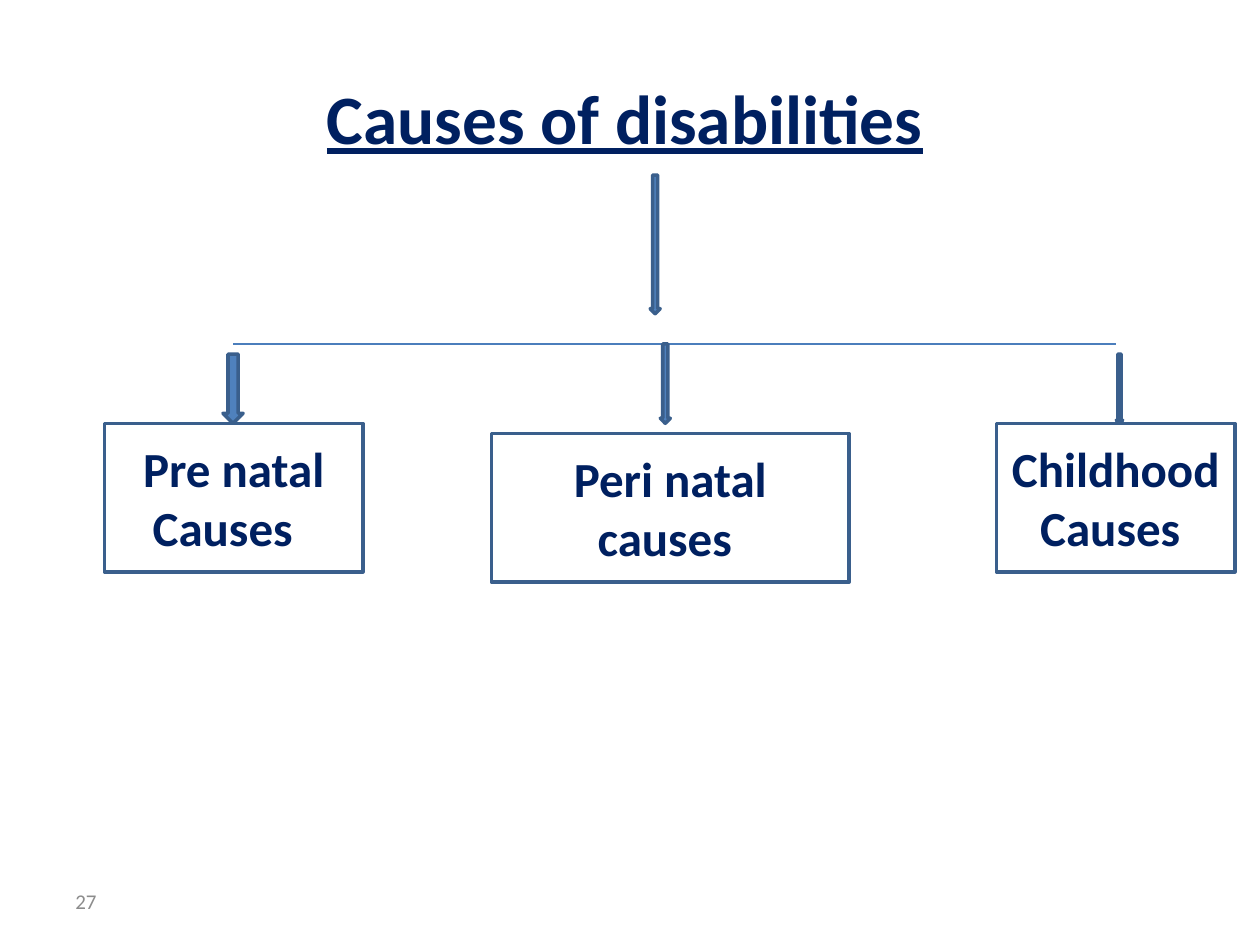
from dataclasses import dataclass

from lxml import etree
from pptx import Presentation
from pptx.dml.color import RGBColor
from pptx.enum.shapes import MSO_CONNECTOR, MSO_SHAPE
from pptx.enum.text import MSO_ANCHOR, PP_ALIGN
from pptx.oxml.ns import qn
from pptx.util import Inches, Pt

DOWN_ARROW = MSO_SHAPE.DOWN_ARROW
RECTANGLE = MSO_SHAPE.RECTANGLE
STRAIGHT = MSO_CONNECTOR.STRAIGHT
MIDDLE = MSO_ANCHOR.MIDDLE
LEFT = PP_ALIGN.LEFT
CENTER = PP_ALIGN.CENTER
TITLE_ONLY = 5


@dataclass(frozen=True)
class Theme:
    font: str = "Calibri"
    navy: RGBColor = RGBColor(0x00, 0x20, 0x60)
    arrow: RGBColor = RGBColor(0x4F, 0x81, 0xBD)
    outline: RGBColor = RGBColor(0x3A, 0x5F, 0x8C)
    branch: RGBColor = RGBColor(0x4B, 0x7E, 0xBC)
    paper: RGBColor = RGBColor(0xFF, 0xFF, 0xFF)
    muted: RGBColor = RGBColor(0x8C, 0x8C, 0x8C)
    title_size: Pt = Pt(39.6)
    cause_size: Pt = Pt(28)
    number_size: Pt = Pt(12)
    outline_width: Pt = Pt(2)
    branch_width: Pt = Pt(0.75)


THEME = Theme()
BRANCH_Y = 2.73
CAUSES = [
    (["Pre natal", "Causes  "], (0.83, 3.36, 2.05, 1.18), (1.77, 2.81, 0.16, 0.55)),
    (["Peri natal causes "], (3.9, 3.44, 2.84, 1.18), (5.24, BRANCH_Y, 0.08, 0.63)),
    (["Childhood ", "Causes "], (7.91, 3.36, 1.89, 1.18), (8.86, 2.81, 0.05, 0.55)),
]


def inches(box):
    return [Inches(length) for length in box]


def write(frame, lines, size, color, align=CENTER, **formats):
    frame.word_wrap = True
    frame.vertical_anchor = MIDDLE
    formats = {"name": THEME.font, "size": size, **formats}
    for index, line in enumerate(lines):
        paragraph = frame.paragraphs[0] if index == 0 else frame.add_paragraph()
        paragraph.alignment = align
        run = paragraph.add_run()
        run.text = line
        run.font.color.rgb = color
        for attribute, value in formats.items():
            setattr(run.font, attribute, value)


def add_outlined(slide, preset, box, fill):
    outlined = slide.shapes.add_shape(preset, *inches(box))
    outlined.shadow.inherit = False
    outlined.fill.solid()
    outlined.fill.fore_color.rgb = fill
    outlined.line.color.rgb = THEME.outline
    outlined.line.width = THEME.outline_width
    return outlined


def add_heading(slide, box):
    heading = slide.shapes.title
    heading.left, heading.top, heading.width, heading.height = inches(box)
    write(heading.text_frame, ["Causes of disabilities"], THEME.title_size,
          THEME.navy, bold=True, underline=True)


def add_branch(slide, start, end, y):
    branch = slide.shapes.add_connector(STRAIGHT, *inches((start, y, end, y)))
    branch.line.color.rgb = THEME.branch
    branch.line.width = THEME.branch_width
    etree.SubElement(branch.element.spPr, qn("a:effectLst"))


def add_cause(slide, lines, box, arrow_box):
    add_outlined(slide, DOWN_ARROW, arrow_box, THEME.arrow)
    cause = add_outlined(slide, RECTANGLE, box, THEME.paper)
    write(cause.text_frame, lines, THEME.cause_size, THEME.navy, bold=True)


def add_page_number(slide, box):
    number = slide.shapes.add_textbox(*inches(box))
    write(number.text_frame, ["27"], THEME.number_size, THEME.muted, LEFT)


def main():
    deck = Presentation()
    deck.slide_width, deck.slide_height = Inches(10), Inches(7.5)
    slide = deck.slides.add_slide(deck.slide_layouts[TITLE_ONLY])
    add_heading(slide, (2.4, 0.3, 5.12, 1.25))
    add_outlined(slide, DOWN_ARROW, (5.16, 1.39, 0.08, 1.1), THEME.arrow)
    add_branch(slide, 1.85, 8.86, BRANCH_Y)
    for lines, box, arrow_box in CAUSES:
        add_cause(slide, lines, box, arrow_box)
    add_page_number(slide, (0.5, 6.95, 2.33, 0.4))
    deck.save("out.pptx")


if __name__ == "__main__":
    main()
